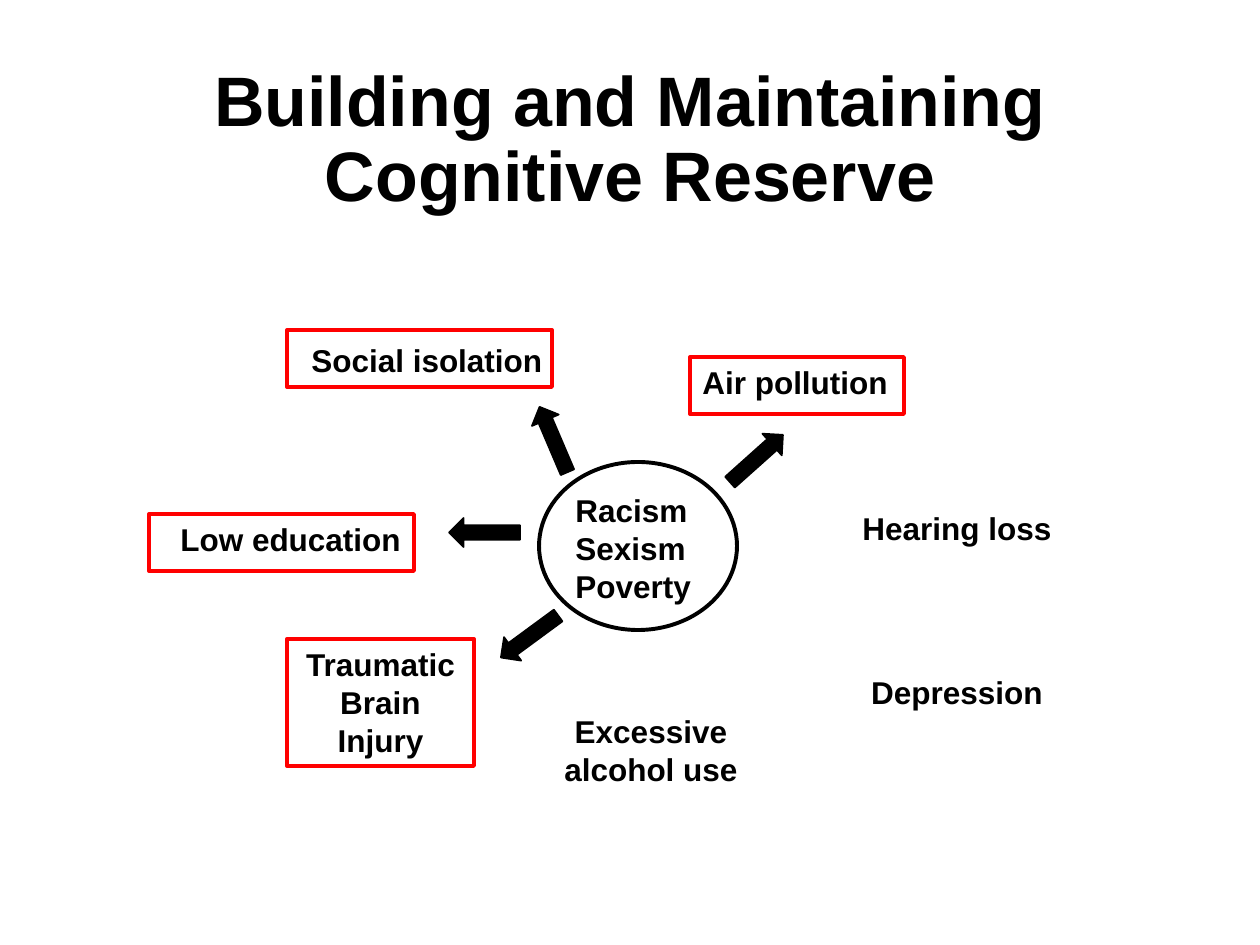
"""Build the cognitive reserve slide."""
from dataclasses import dataclass

from pptx import Presentation
from pptx.dml.color import RGBColor
from pptx.enum.shapes import MSO_SHAPE
from pptx.enum.text import MSO_ANCHOR, PP_ALIGN
from pptx.util import Emu, Pt

RECT, OVAL, ARROW = MSO_SHAPE.RECTANGLE, MSO_SHAPE.OVAL, MSO_SHAPE.RIGHT_ARROW
LEFT, MID = PP_ALIGN.LEFT, PP_ALIGN.CENTER
TOP, MIDDLE = MSO_ANCHOR.TOP, MSO_ANCHOR.MIDDLE
SCALE = 914400 / 126


@dataclass(frozen=True)
class Theme:
    """Hold the colours, type sizes and line widths."""
    font: str = "Arial"
    ink: RGBColor = RGBColor(0, 0, 0)
    alert: RGBColor = RGBColor(255, 0, 0)
    title: float = 40
    body: float = 18
    frame: float = 2.25
    edge: float = 1


THEME = Theme()

LABELS = [
    ("Low education", (168, 514, 266, 50), LEFT),
    ("Social isolation", (299, 335, 266, 50), LEFT),
    ("Hearing loss", (824, 503, 266, 50), MID),
    ("Racism\nSexism\nPoverty", (563, 485, 185, 127), LEFT),
    ("Air pollution", (690, 357, 214, 50), LEFT),
    ("Traumatic Brain Injury", (287, 639, 187, 127), MID),
    ("Depression", (824, 667, 266, 50), MID),
    ("Excessive alcohol use", (518, 706, 266, 90), MID),
]
FRAMES = [
    (690, 357, 214, 57),
    (287, 330, 265, 57),
    (149, 514, 265, 57),
    (287, 639, 187, 127),
]
ARROWS = [
    (518, 425, 246.9),
    (449, 518, 180),
    (721, 444, 318.2),
    (494, 622, 143.7),
]


def px(*sizes):
    """Turn pixels into EMU."""
    return [Emu(round(size * SCALE)) for size in sizes]


def style(item, form):
    """Set each format value on the item."""
    for name, value in form.items():
        setattr(item, name, value)


def label(slide, text, box, align, size=THEME.body, anchor=TOP, space=1.0):
    """Add bold text in a box, one paragraph a line."""
    frame = slide.shapes.add_textbox(*px(*box)).text_frame
    style(frame, {"word_wrap": True, "vertical_anchor": anchor})
    frame.text = text
    for para in frame.paragraphs:
        style(para, {"alignment": align, "line_spacing": space})
        font = para.runs[0].font
        style(font, {"name": THEME.font, "size": Pt(size), "bold": True})
        font.color.rgb = THEME.ink


def outline(slide, kind, box, color, width=THEME.frame):
    """Add an unfilled shape with a coloured line."""
    shape = slide.shapes.add_shape(kind, *px(*box))
    shape.shadow.inherit = False
    shape.fill.background()
    shape.line.color.rgb = color
    shape.line.width = Pt(width)
    return shape


def arrow(slide, left, top, turn):
    """Add a solid block arrow turned by degrees."""
    shape = outline(slide, ARROW, (left, top, 71, 29), THEME.ink, THEME.edge)
    shape.fill.solid()
    shape.fill.fore_color.rgb = THEME.ink
    shape.rotation = turn


def main():
    """Draw the slide and save it."""
    deck = Presentation()
    deck.slide_width, deck.slide_height = px(1260, 945)
    slide = deck.slides.add_slide(deck.slide_layouts[6])
    label(slide, "Building and Maintaining Cognitive Reserve",
          (87, 50, 1086, 183), MID, THEME.title, MIDDLE, 0.9)
    for text, box, align in LABELS:
        label(slide, text, box, align)
    for box in FRAMES:
        outline(slide, RECT, box, THEME.alert)
    outline(slide, OVAL, (539, 462, 198, 168), THEME.ink)
    for left, top, turn in ARROWS:
        arrow(slide, left, top, turn)
    deck.save("out.pptx")


if __name__ == "__main__":
    main()
